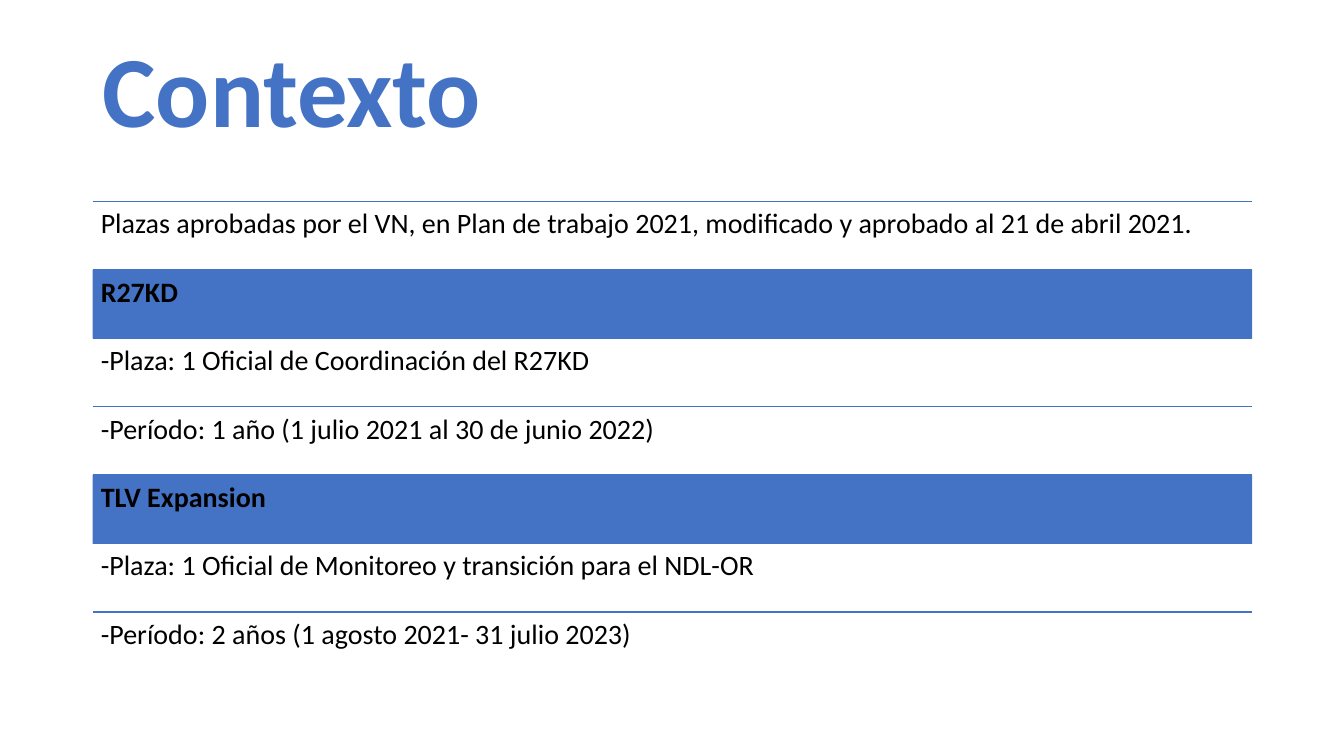
from typing import NamedTuple

from lxml.etree import SubElement
from pptx import Presentation
from pptx.dml.color import RGBColor
from pptx.enum.shapes import MSO_CONNECTOR as Link, MSO_SHAPE as Shape
from pptx.enum.text import MSO_ANCHOR as Anchor
from pptx.oxml.ns import qn
from pptx.shapes.shapetree import GroupShapes, SlideShapes
from pptx.util import Inches, Pt

BLUE = RGBColor(0x44, 0x72, 0xC4)
BLACK = RGBColor(0, 0, 0)
FONT = "Calibri"

LEFT, WIDTH = Inches(0.92), Inches(11.5)
TOP, BOTTOM = Inches(2), Inches(6.75)


class Row(NamedTuple):
    text: str
    head: bool = False


class Style(NamedTuple):
    size: int
    color: RGBColor
    bold: bool
    anchor: Anchor
    pad_x: float
    pad_y: float
    after: float = 0


TITLE = Style(72, BLUE, True, Anchor.MIDDLE, 0.1, 0.05)
ITEM = Style(20, BLACK, False, Anchor.TOP, 0.08, 0.08, 7)
HEAD = ITEM._replace(bold=True)

ROWS = [
    Row("Plazas aprobadas por el VN, en Plan de trabajo 2021, "
        "modificado y aprobado al 21 de abril 2021."),
    Row("R27KD", head=True),
    Row("-Plaza: 1 Oficial de Coordinación del R27KD"),
    Row("-Período: 1 año (1 julio 2021 al 30 de junio 2022)"),
    Row("TLV Expansion", head=True),
    Row("-Plaza: 1 Oficial de Monitoreo y transición para el NDL-OR"),
    Row("-Período: 2 años (1 agosto 2021- 31 julio 2023)"),
]
PITCH = (BOTTOM - TOP) // len(ROWS)


def add_text(shapes: SlideShapes | GroupShapes, text: str, top: int,
             height: int, style: Style) -> None:
    frame = shapes.add_textbox(LEFT, top, WIDTH, height).text_frame
    frame.word_wrap = True
    frame.vertical_anchor = style.anchor
    frame.margin_left = frame.margin_right = Inches(style.pad_x)
    frame.margin_top = frame.margin_bottom = Inches(style.pad_y)
    para = frame.paragraphs[0]
    para.text = text
    para.line_spacing = 0.9
    para.space_after = Pt(style.after)
    font = para.font
    font.name, font.size, font.bold = FONT, Pt(style.size), style.bold
    font.color.rgb = style.color


def add_rule(shapes: GroupShapes, top: int) -> None:
    rule = shapes.add_connector(Link.STRAIGHT, LEFT, top, LEFT + WIDTH, top)
    rule.line.color.rgb = BLUE
    rule.line.width = Pt(1)
    SubElement(rule._element.spPr, qn("a:effectLst"))


def add_band(shapes: GroupShapes, top: int) -> None:
    band = shapes.add_shape(Shape.RECTANGLE, LEFT, top, WIDTH, PITCH)
    band.shadow.inherit = False
    band.fill.solid()
    band.fill.fore_color.rgb = BLUE
    band.line.fill.background()


def main() -> None:
    deck = Presentation()
    deck.slide_width, deck.slide_height = Inches(13.33), Inches(7.5)
    slide = deck.slides.add_slide(deck.slide_layouts[6])
    add_text(slide.shapes, "Contexto", Inches(0.22), Inches(1.45), TITLE)
    rows = slide.shapes.add_group_shape().shapes
    for i, row in enumerate(ROWS):
        top = TOP + i * PITCH
        add_rule(rows, top)
        if row.head:
            add_band(rows, top)
        add_text(rows, row.text, top, PITCH, HEAD if row.head else ITEM)
    deck.save("out.pptx")


if __name__ == "__main__":
    main()
